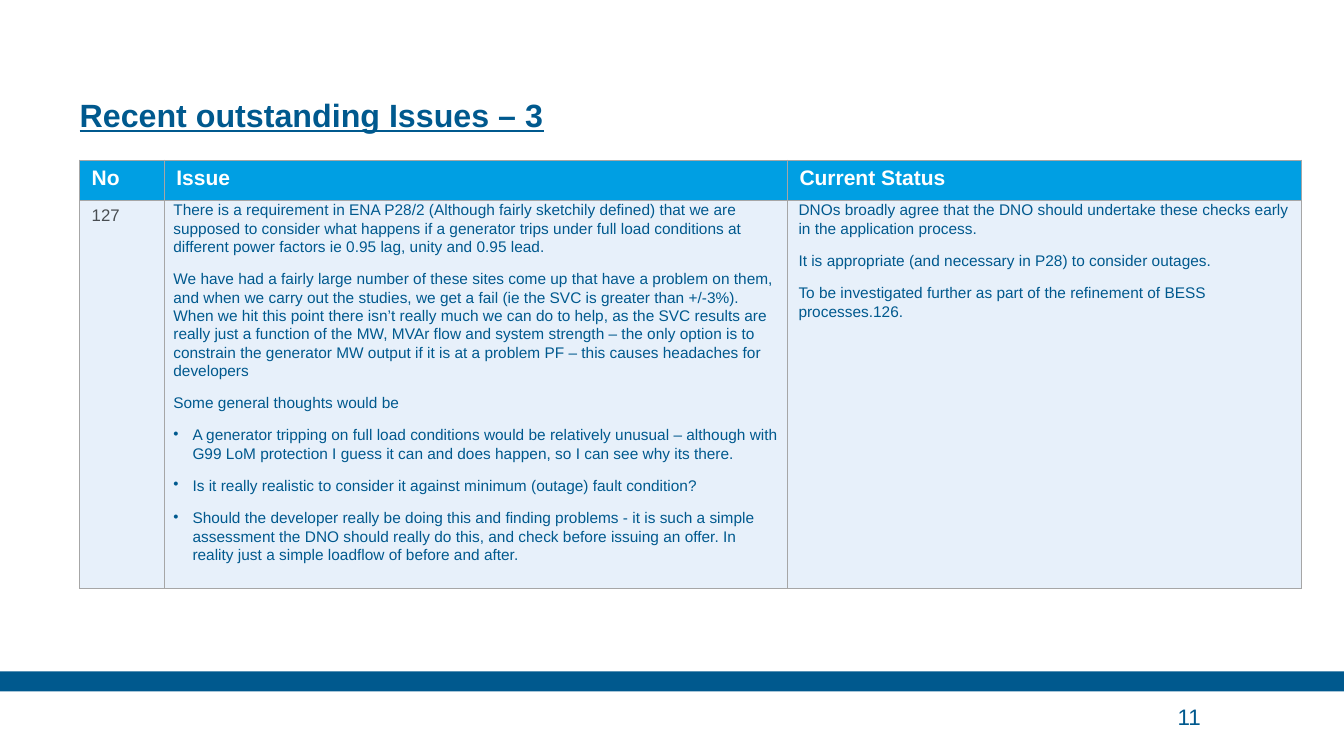
from lxml import etree
from pptx import Presentation
from pptx import util as u
from pptx.dml.color import RGBColor
from pptx.enum import shapes, text
from pptx.oxml.ns import qn

# Content
TITLE = "Recent outstanding Issues – 3"
PAGE = "11"
HEADS = ["No", "Issue", "Current Status"]
NUM = "127"
ISSUE = [
    "There is a requirement in ENA P28/2 (Although fairly sketchily defined) that we are supposed to consider what happens if a generator trips under full load conditions at different power factors ie 0.95 lag, unity and 0.95 lead.",
    "We have had a fairly large number of these sites come up that have a problem on them, and when we carry out the studies, we get a fail (ie the SVC is greater than +/-3%). When we hit this point there isn’t really much we can do to help, as the SVC results are really just a function of the MW, MVAr flow and system strength – the only option is to constrain the generator MW output if it is at a problem PF – this causes headaches for developers",
    "Some general thoughts would be",
]
POINTS = [
    "A generator tripping on full load conditions would be relatively unusual – although with G99 LoM protection I guess it can and does happen, so I can see why its there.",
    "Is it really realistic to consider it against minimum (outage) fault condition?",
    "Should the developer really be doing this and finding problems - it is such a simple assessment the DNO should really do this, and check before issuing an offer. In reality just a simple loadflow of before and after.",
]
STATUS = [
    "DNOs broadly agree that the DNO should undertake these checks early in the application process.",
    "It is appropriate (and necessary in P28) to consider outages.",
    "To be investigated further as part of the refinement of BESS processes.126.",
]

# Layout and colours
WIDE, HIGH = 13.33, 7.5
LEFT, TOP = 0.79, 1.59
COLS, ROWS = [0.84, 6.18, 5.1], [0.4, 3.85]
NAVY, SKY, PALE, GREY, RULE = "00598E", "009FE3", "E7F0FA", "484D51", "A6A6A6"


def paint(fill, color):
    fill.solid()
    fill.fore_color.rgb = RGBColor.from_string(color)


def write(frame, lines, size, color=NAVY, bold=False, line=None, gap=0,
          indent=0, points=(), **font):
    """Fill a frame with plain lines, then with bulleted points."""
    rows = [(t, False) for t in lines] + [(t, True) for t in points]
    for i, (words, dot) in enumerate(rows):
        para = frame.add_paragraph() if i else frame.paragraphs[0]
        props = para._p.get_or_add_pPr()
        props.set("marL", str(u.Inches(0.21 if dot else indent)))
        props.set("indent", str(u.Inches(-0.19 if dot else 0)))
        if dot:
            etree.SubElement(props, qn("a:buChar")).set("char", "•")
        para.line_spacing = line
        para.space_before = u.Pt(gap if i else 0)
        para.space_after = u.Pt(gap)
        run = para.add_run()
        run.text = words
        run.font.name, run.font.size, run.font.bold = "Arial", u.Pt(size), bold
        run.font.color.rgb = RGBColor.from_string(color)
        for key, val in font.items():
            setattr(run.font, key, val)


def box(slide, place, anchor, words, size, **form):
    frame = slide.shapes.add_textbox(*map(u.Inches, place)).text_frame
    frame.word_wrap = True
    frame.margin_left = frame.margin_right = 0
    frame.margin_top = frame.margin_bottom = 0
    frame.vertical_anchor = anchor
    write(frame, [words], size, **form)


def style(cell, color, side, end):
    """Set the margins, borders and fill of a cell."""
    cell.margin_left = cell.margin_right = u.Inches(side)
    cell.margin_top = cell.margin_bottom = u.Inches(end)
    props = cell._tc.get_or_add_tcPr()
    for edge in "LRTB":
        rule = etree.SubElement(props, qn("a:ln" + edge), w=str(u.Pt(1)))
        solid = etree.SubElement(rule, qn("a:solidFill"))
        etree.SubElement(solid, qn("a:srgbClr"), val=RULE)
    paint(cell.fill, color)


def main():
    deck = Presentation()
    deck.slide_width, deck.slide_height = u.Inches(WIDE), u.Inches(HIGH)
    slide = deck.slides.add_slide(deck.slide_layouts[6])

    # Footer band, title and page number
    band = slide.shapes.add_shape(
        shapes.MSO_SHAPE.RECTANGLE, 0, u.Inches(6.66), deck.slide_width, u.Inches(0.2))
    band.shadow.inherit = False
    paint(band.fill, NAVY)
    band.line.fill.background()
    box(slide, (LEFT, 0.31, 9.84, 1.02), text.MSO_ANCHOR.BOTTOM, TITLE, 23,
        bold=True, underline=True, line=u.Pt(30))
    box(slide, (11.68, 6.91, 1.23, 0.39), text.MSO_ANCHOR.MIDDLE, PAGE, 16)

    # Issue table
    table = slide.shapes.add_table(
        len(ROWS), len(COLS),
        *map(u.Inches, (LEFT, TOP, sum(COLS), sum(ROWS)))).table
    for col, wide in zip(table.columns, COLS):
        col.width = u.Inches(wide)
    for row, high in zip(table.rows, ROWS):
        row.height = u.Inches(high)
    for i, head in enumerate(HEADS):
        cell = table.cell(0, i)
        style(cell, SKY, 0.12, 0.06)
        write(cell.text_frame, [head], 15, color="FFFFFF", bold=True)

    num, issue, status = table.rows[1].cells
    style(num, PALE, 0.12, 0.06)
    write(num.text_frame, [NUM], 12, color=GREY)
    body = dict(size=11, line=1.07, gap=5)
    style(issue, PALE, 0.07, 0)
    write(issue.text_frame, ISSUE, points=POINTS, indent=0.02, **body)
    style(status, PALE, 0.07, 0)
    write(status.text_frame, STATUS, indent=0.04, **body)

    deck.save("out.pptx")


if __name__ == "__main__":
    main()
